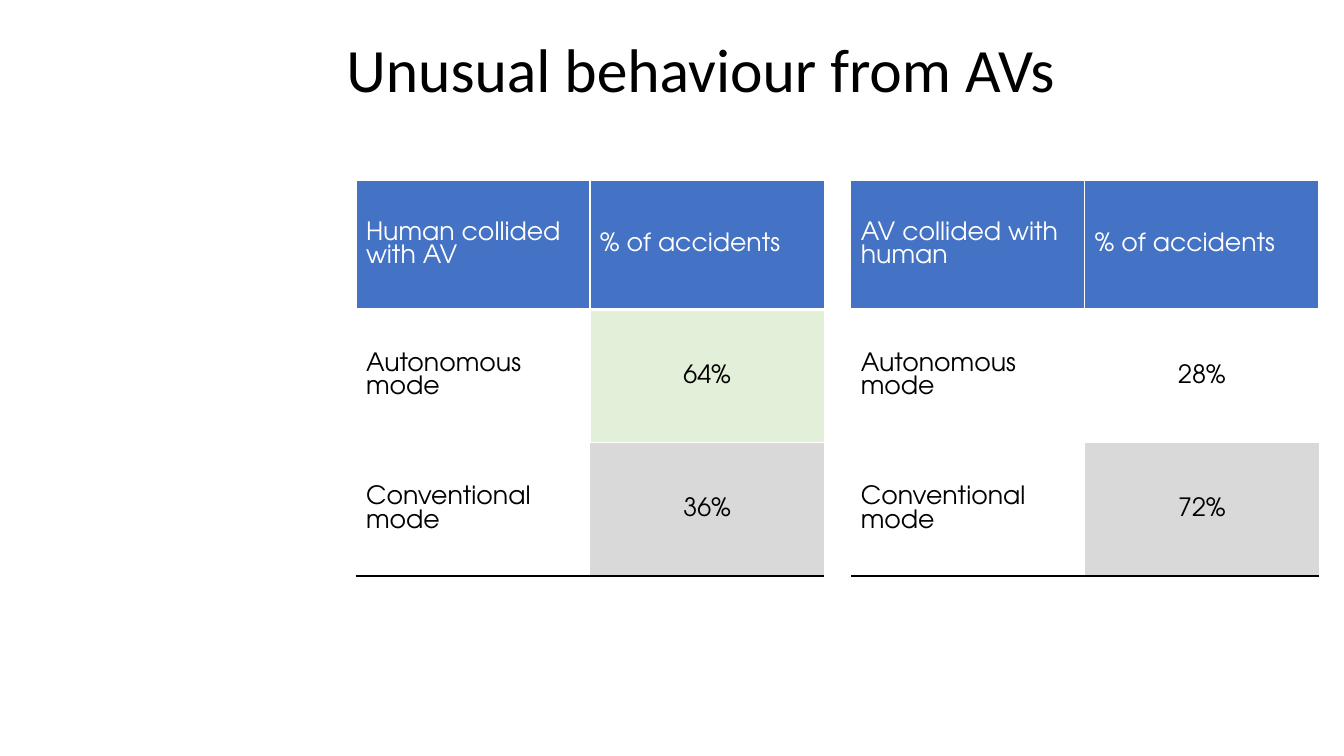
from dataclasses import dataclass
from lxml import etree
from pptx import Presentation
from pptx.dml.color import RGBColor
from pptx.enum.text import MSO_ANCHOR, PP_ALIGN
from pptx.oxml.ns import qn
from pptx.slide import Slide
from pptx.table import _Cell
from pptx.text.text import _Paragraph
from pptx.util import Cm, Pt

MIDDLE = MSO_ANCHOR.MIDDLE
LEFT, CENTER = PP_ALIGN.LEFT, PP_ALIGN.CENTER
WHITE = RGBColor(0xFF, 0xFF, 0xFF)
BLACK = RGBColor(0x00, 0x00, 0x00)
BLUE = RGBColor(0x44, 0x72, 0xC4)
GREEN = RGBColor(0xE2, 0xF0, 0xD9)
GRAY = RGBColor(0xD9, 0xD9, 0xD9)
NO_STYLE = "{2D5ABB26-0587-4C30-8999-92F81FD0307C}"

TOP = Cm(4.55)
COL = Cm(5.9)
ROWS = (Cm(3.25), Cm(3.36), Cm(3.36))

# Border side, colour and width in points for each row
EDGES = (
    (("L", WHITE, 1), ("R", WHITE, 1), ("T", WHITE, 1), ("B", WHITE, 3)),
    (("L", WHITE, 1), ("R", WHITE, 1), ("T", WHITE, 1)),
    (("B", BLACK, 1.5),),
)


@dataclass
class Item:
    text: str
    fill: RGBColor | None = None
    color: RGBColor = BLACK
    align: PP_ALIGN = LEFT


@dataclass
class Grid:
    left: Cm
    head: str
    auto: Item
    conv: Item

    def rows(self) -> list[tuple[Item, Item]]:
        return [
            (Item(self.head, BLUE, WHITE), Item("% of accidents", BLUE, WHITE)),
            (Item("Autonomous mode"), self.auto),
            (Item("Conventional mode"), self.conv),
        ]


GRIDS = (
    Grid(Cm(8.97), "Human collided with AV",
         Item("64%", GREEN, align=CENTER), Item("36%", GRAY, align=CENTER)),
    Grid(Cm(21.44), "AV collided with human",
         Item("28%", align=CENTER), Item("72%", GRAY, align=CENTER)),
)


def add_run(para: _Paragraph, text: str, face: str, size: int,
            color: RGBColor) -> None:
    run = para.add_run()
    run.text = text
    run.font.name = face
    run.font.size = Pt(size)
    run.font.color.rgb = color


def add_edge(cell: _Cell, side: str, color: RGBColor, width: float) -> None:
    props = cell._tc.get_or_add_tcPr()
    line = etree.SubElement(props, qn(f"a:ln{side}"), w=str(Pt(width)))
    fill = etree.SubElement(line, qn("a:solidFill"))
    etree.SubElement(fill, qn("a:srgbClr"), val=str(color))


def fill_cell(cell: _Cell, item: Item, edges: tuple) -> None:
    for edge in edges:
        add_edge(cell, *edge)
    if item.fill is None:
        cell.fill.background()
    else:
        cell.fill.solid()
        cell.fill.fore_color.rgb = item.fill
    cell.vertical_anchor = MIDDLE
    para = cell.text_frame.paragraphs[0]
    para.alignment = item.align
    add_run(para, item.text, "TeX Gyre Adventor", 18, item.color)


def add_grid(slide: Slide, grid: Grid) -> None:
    frame = slide.shapes.add_table(3, 2, grid.left, TOP, 2 * COL, sum(ROWS))
    table = frame.table
    table.horz_banding = False
    table._tbl.tblPr.find(qn("a:tableStyleId")).text = NO_STYLE
    for col in table.columns:
        col.width = COL
    for row, high, items, edges in zip(table.rows, ROWS, grid.rows(), EDGES):
        row.height = high
        for cell, item in zip(row.cells, items):
            fill_cell(cell, item, edges)


def add_title(slide: Slide) -> None:
    box = slide.shapes.add_textbox(Cm(8.48), Cm(0), Cm(22.12), Cm(3.68))
    frame = box.text_frame
    frame.word_wrap = True
    frame.vertical_anchor = MIDDLE
    para = frame.paragraphs[0]
    para.line_spacing = 0.9
    add_run(para, "Unusual behaviour from AVs", "Calibri", 44, BLACK)


def main() -> None:
    deck = Presentation()
    deck.slide_width, deck.slide_height = Cm(33.87), Cm(19.05)
    slide = deck.slides.add_slide(deck.slide_layouts[6])
    add_title(slide)
    for grid in GRIDS:
        add_grid(slide, grid)
    deck.save("out.pptx")


if __name__ == "__main__":
    main()
